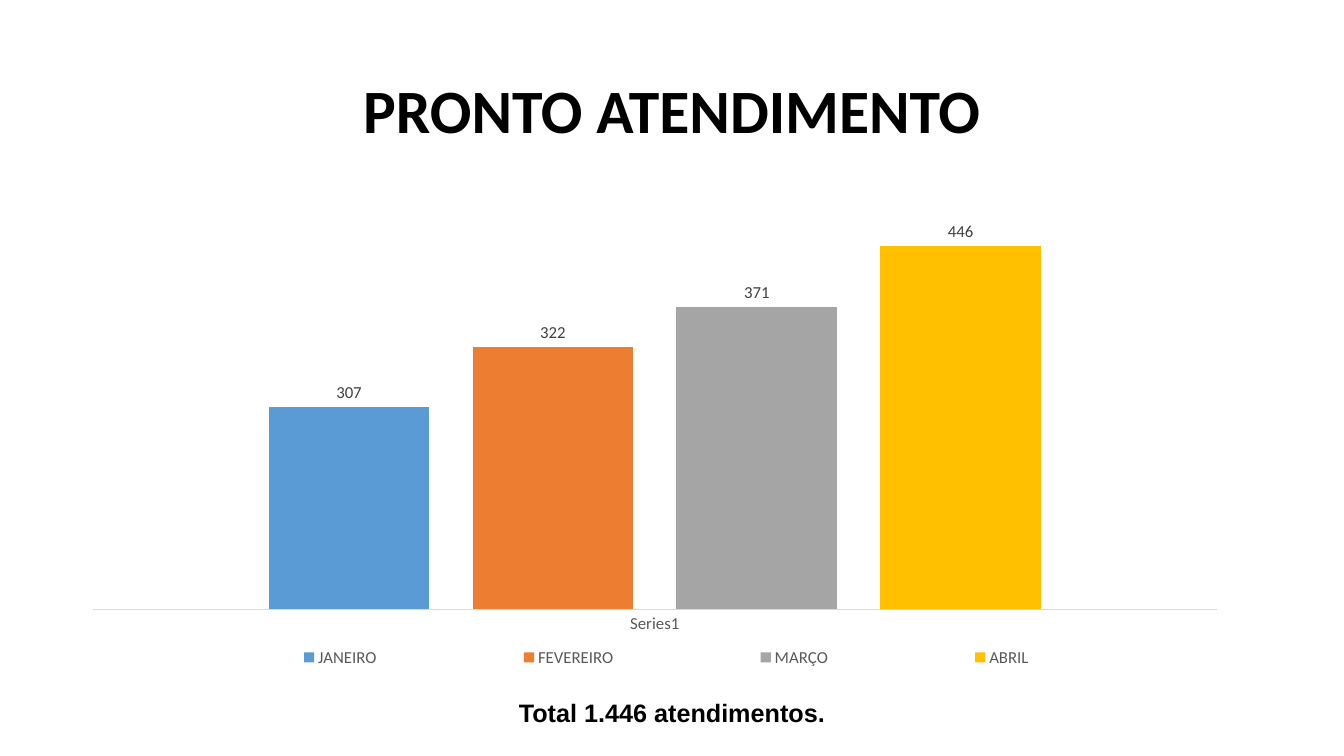
from dataclasses import dataclass

from pptx import Presentation
from pptx import util as u
from pptx.chart import data as cd
from pptx.dml import color as dc
from pptx.enum import chart as ec
from pptx.enum import text as et
from pptx.oxml import parse_xml
from pptx.oxml.ns import nsdecls, qn


@dataclass
class Box:
    left: float
    top: float
    width: float
    height: float

    def cm(self) -> list:
        return [u.Cm(v) for v in (self.left, self.top, self.width, self.height)]


@dataclass
class Label:
    text: str
    box: Box
    size: float
    face: str


@dataclass
class Month:
    name: str
    value: int
    fill: str
    note: str = ""


LABELS = [
    Label("PRONTO ATENDIMENTO", Box(2.33, 1.01, 29.21, 3.68), 44, "Calibri"),
    Label("Total 1.446 atendimentos.", Box(10.46, 16.94, 12.95, 2.11), 18, "Arial"),
]
MONTHS = [
    Month("JANEIRO", 248, "5B9BD5", "307"),
    Month("FEVEREIRO", 322, "ED7D31"),
    Month("MARÇO", 371, "A5A5A5"),
    Month("ABRIL", 446, "FFC000"),
]
AREA = Box(2.33, 5.08, 29.21, 12.09)


def rgb(code: str) -> dc.RGBColor:
    return dc.RGBColor.from_string(code)


def style(font, size: float, color: str, face: str = "Calibri", bold: bool = False) -> None:
    font.size = u.Pt(size)
    font.name = face
    font.bold = bold
    font.color.rgb = rgb(color)


def write(slide, label: Label) -> None:
    frame = slide.shapes.add_textbox(*label.box.cm()).text_frame
    frame.word_wrap = True
    frame.vertical_anchor = et.MSO_ANCHOR.MIDDLE
    frame.text = label.text
    line = frame.paragraphs[0]
    line.alignment = et.PP_ALIGN.CENTER
    line.line_spacing = 0.9
    style(line.runs[0].font, label.size, "000000", label.face, True)


def place(node, index: int, box: Box, inner: bool = False) -> None:
    """Fix a chart part at fractions of the chart area."""
    for old in node.findall(qn("c:layout")):
        node.remove(old)
    target = '<c:layoutTarget val="inner"/>' if inner else ""
    sides = zip("xywh", (box.left, box.top, box.width, box.height))
    sizes = "".join(f'<c:{key} val="{val}"/>' for key, val in sides)
    node.insert(index, parse_xml(
        f'<c:layout {nsdecls("c")}><c:manualLayout>{target}'
        f'<c:xMode val="edge"/><c:yMode val="edge"/>{sizes}'
        '</c:manualLayout></c:layout>'))


def paint(bar, month: Month) -> None:
    bar.format.fill.solid()
    bar.format.fill.fore_color.rgb = rgb(month.fill)
    bar.invert_if_negative = False
    tags = bar.data_labels
    tags.show_value = True
    tags.position = ec.XL_LABEL_POSITION.OUTSIDE_END
    style(tags.font, 12, "404040")
    if month.note:
        tag = bar.points[0].data_label
        tag.text_frame.text = month.note
        style(tag.text_frame.paragraphs[0].runs[0].font, 12, "404040")
        tag.position = ec.XL_LABEL_POSITION.OUTSIDE_END


def draw(slide) -> None:
    data = cd.CategoryChartData()
    data.categories = ["Series1"]
    for month in MONTHS:
        data.add_series(month.name, [month.value])
    chart = slide.shapes.add_chart(
        ec.XL_CHART_TYPE.COLUMN_CLUSTERED, *AREA.cm(), data).chart
    style(chart.font, 10, "000000")
    chart.has_title = False

    plot = chart.plots[0]
    plot.gap_width = 219
    plot.overlap = -27
    plot.vary_by_categories = False
    for bar, month in zip(plot.series, MONTHS):
        paint(bar, month)

    base = chart.category_axis
    base.major_tick_mark = ec.XL_TICK_MARK.NONE
    base.format.line.color.rgb = rgb("D9D9D9")
    base.format.line.width = u.Pt(0.75)
    style(base.tick_labels.font, 12, "595959")
    scale = chart.value_axis
    scale.minimum_scale, scale.maximum_scale = 0, 500
    scale.has_major_gridlines = False
    scale.visible = False

    chart.has_legend = True
    key = chart.legend
    key.position = ec.XL_LEGEND_POSITION.BOTTOM
    key.include_in_layout = False
    style(key.font, 12, "595959")
    place(key._element, 1, Box(0.06, 0.91, 0.87, 0.08))
    place(chart._chartSpace.chart.plotArea, 0, Box(0, 0, 0.97, 0.85), True)


def main() -> None:
    deck = Presentation()
    deck.slide_width, deck.slide_height = u.Cm(33.87), u.Cm(19.05)
    slide = deck.slides.add_slide(deck.slide_layouts[6])
    draw(slide)
    for label in LABELS:
        write(slide, label)
    deck.save("out.pptx")


if __name__ == "__main__":
    main()
